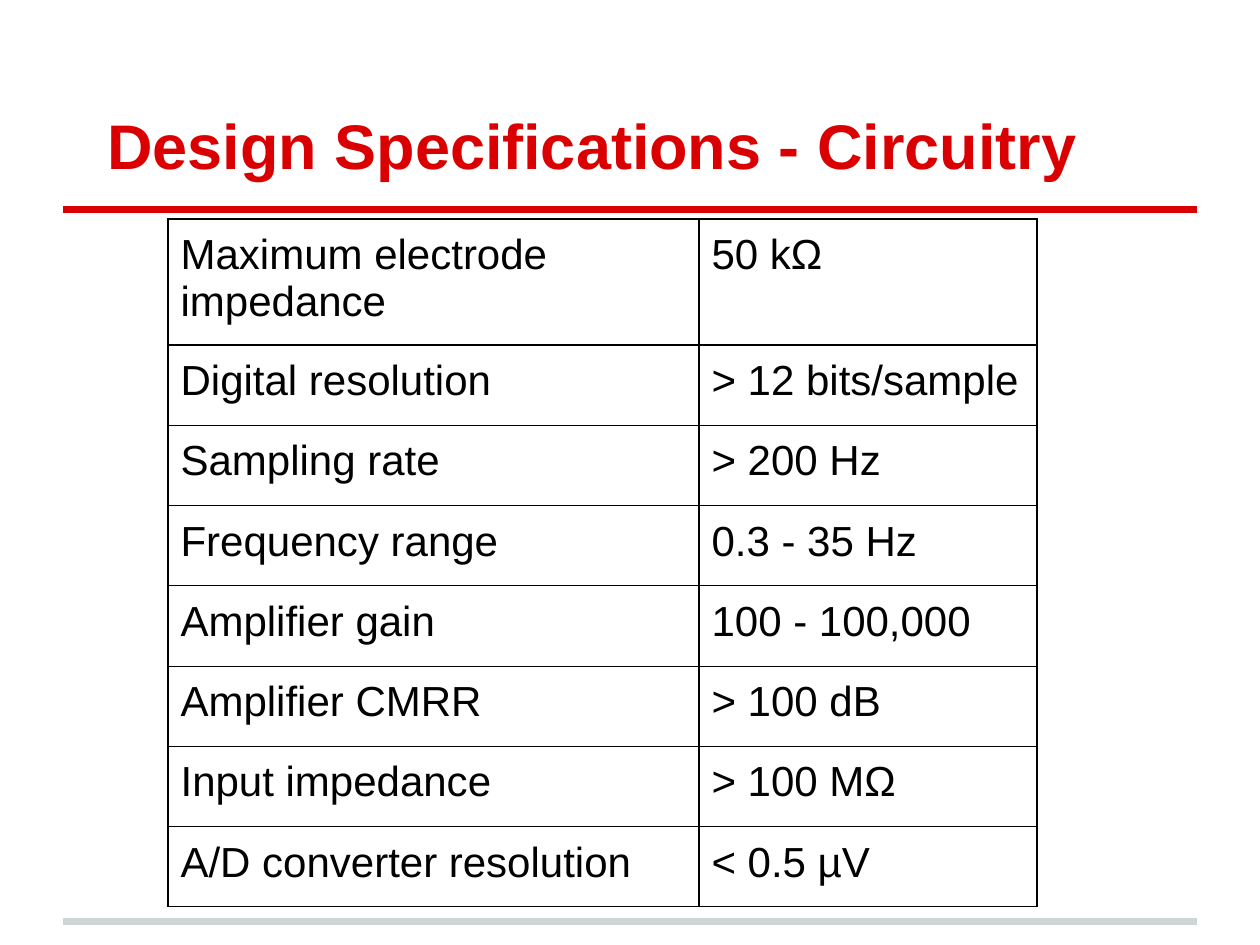
import pptx
import pptx.dml.color
import pptx.enum.shapes
import pptx.enum.text
import pptx.oxml
import pptx.oxml.ns
import pptx.util

EMU_PER_PX = 914400 / 126
COLORS = {"red": "DA0002", "gray": "CFD4D4", "black": "000000"}
FONT = "Arial"

SPECIFICATIONS = [
    ("Maximum electrode impedance", "50 kΩ"),
    ("Digital resolution", "> 12 bits/sample"),
    ("Sampling rate", "> 200 Hz"),
    ("Frequency range", "0.3 - 35 Hz"),
    ("Amplifier gain", "100 - 100,000"),
    ("Amplifier CMRR", "> 100 dB"),
    ("Input impedance", "> 100 MΩ"),
    ("A/D converter resolution", "< 0.5 µV"),
]


def px(length):
    return pptx.util.Emu(round(length * EMU_PER_PX))


def rgb(name):
    return pptx.dml.color.RGBColor.from_string(COLORS[name])


def write_text(frame, text, *, size, color="black", bold=False, indent=0):
    paragraph = frame.paragraphs[0]
    if indent:
        paragraph._p.get_or_add_pPr().set("indent", str(px(indent)))
    run = paragraph.add_run()
    run.text = text
    run.font.name = FONT
    run.font.size = pptx.util.Pt(size)
    run.font.bold = bold
    run.font.color.rgb = rgb(color)


class SlideBuilder:
    """Holds the current slide and the shared inset and border style."""

    inset = px(12.6)
    border = pptx.util.Pt(0.75)

    def __init__(self, slide):
        self.slide = slide

    def set_margins(self, target):
        for side in ("left", "top", "right", "bottom"):
            setattr(target, f"margin_{side}", self.inset)

    def rule(self, left, right, y, color):
        connector = self.slide.shapes.add_connector(
            pptx.enum.shapes.MSO_CONNECTOR.STRAIGHT, px(left), px(y), px(right), px(y))
        connector.line.color.rgb = rgb(color)
        connector.line.width = pptx.util.Pt(4)
        connector._element.spPr.append(pptx.oxml.parse_xml(
            f"<a:effectLst {pptx.oxml.ns.nsdecls('a')}/>"))

    def title(self, left, top, width, height, text):
        box = self.slide.shapes.add_textbox(px(left), px(top), px(width), px(height))
        frame = box.text_frame
        frame.word_wrap = True
        frame.vertical_anchor = pptx.enum.text.MSO_ANCHOR.BOTTOM
        self.set_margins(frame)
        write_text(frame, text, size=36, color="red", bold=True, indent=32)

    def table(self, left, top, column_widths, height, first_row_height, rows):
        frame = self.slide.shapes.add_table(
            len(rows), len(column_widths), px(left), px(top),
            px(sum(column_widths)), px(height))
        table = frame.table
        table.first_row = table.horz_banding = False
        for column, width in zip(table.columns, column_widths):
            column.width = px(width)
        # The first row wraps to two lines; the others share the rest equally
        other_row_height = (height - first_row_height) / (len(rows) - 1)
        for index, (row, texts) in enumerate(zip(table.rows, rows)):
            row.height = px(other_row_height if index else first_row_height)
            for cell, text in zip(row.cells, texts):
                self.set_margins(cell)
                write_text(cell.text_frame, text, size=24)
                self.add_borders(cell)
                cell.fill.background()

    def add_borders(self, cell):
        properties = cell._tc.get_or_add_tcPr()
        for edge in ("lnL", "lnR", "lnT", "lnB"):
            properties.append(pptx.oxml.parse_xml(
                f'<a:{edge} {pptx.oxml.ns.nsdecls("a")} w="{self.border}">'
                f'<a:solidFill><a:srgbClr val="{COLORS["black"]}"/></a:solidFill>'
                f"</a:{edge}>"))


def main():
    presentation = pptx.Presentation()
    presentation.slide_width = px(1260)
    presentation.slide_height = px(945)
    slide = presentation.slides.add_slide(presentation.slide_layouts[6])
    builder = SlideBuilder(slide)

    # Footer and title rules
    builder.rule(63, 1197, 922, "gray")
    builder.rule(63, 1197, 210, "red")

    # Title
    builder.title(63, 38, 1134, 157, "Design Specifications - Circuitry")

    # Specification table
    builder.table(168, 219, [531, 338], 684, 122, SPECIFICATIONS)

    presentation.save("out.pptx")


if __name__ == "__main__":
    main()
